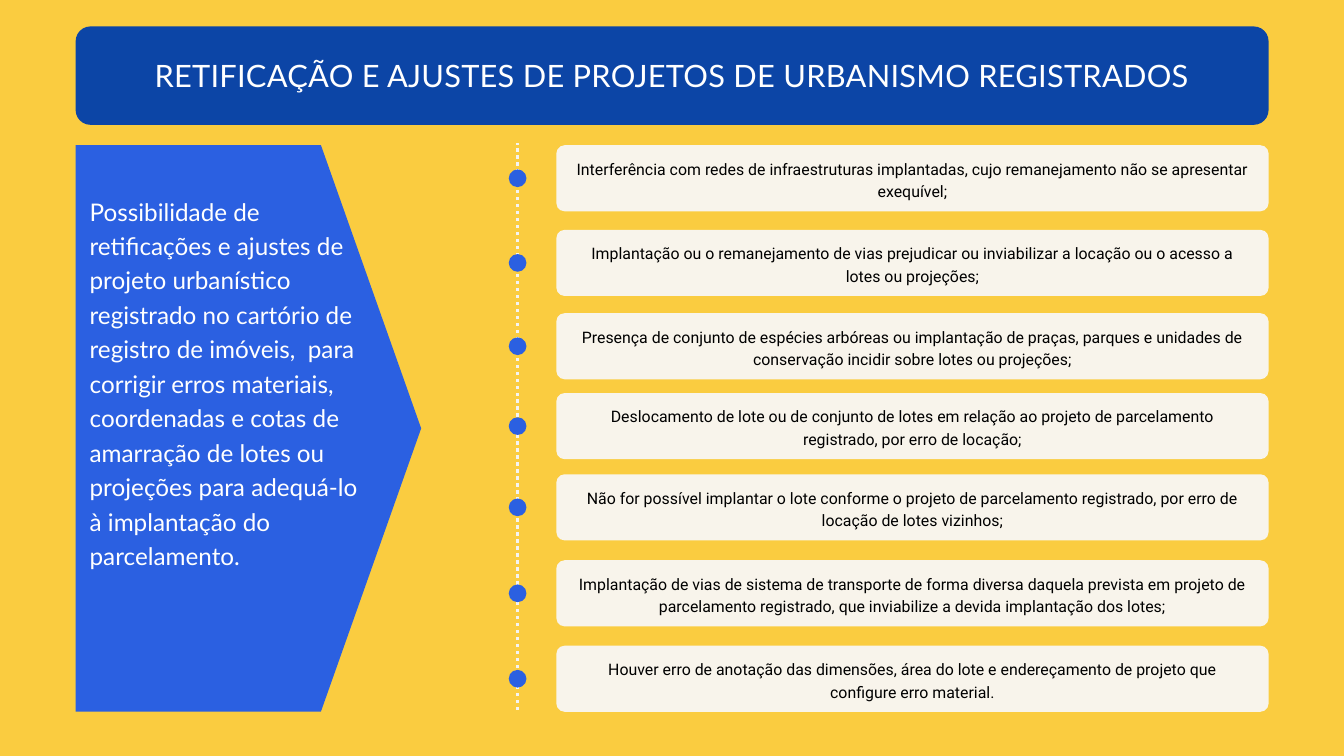
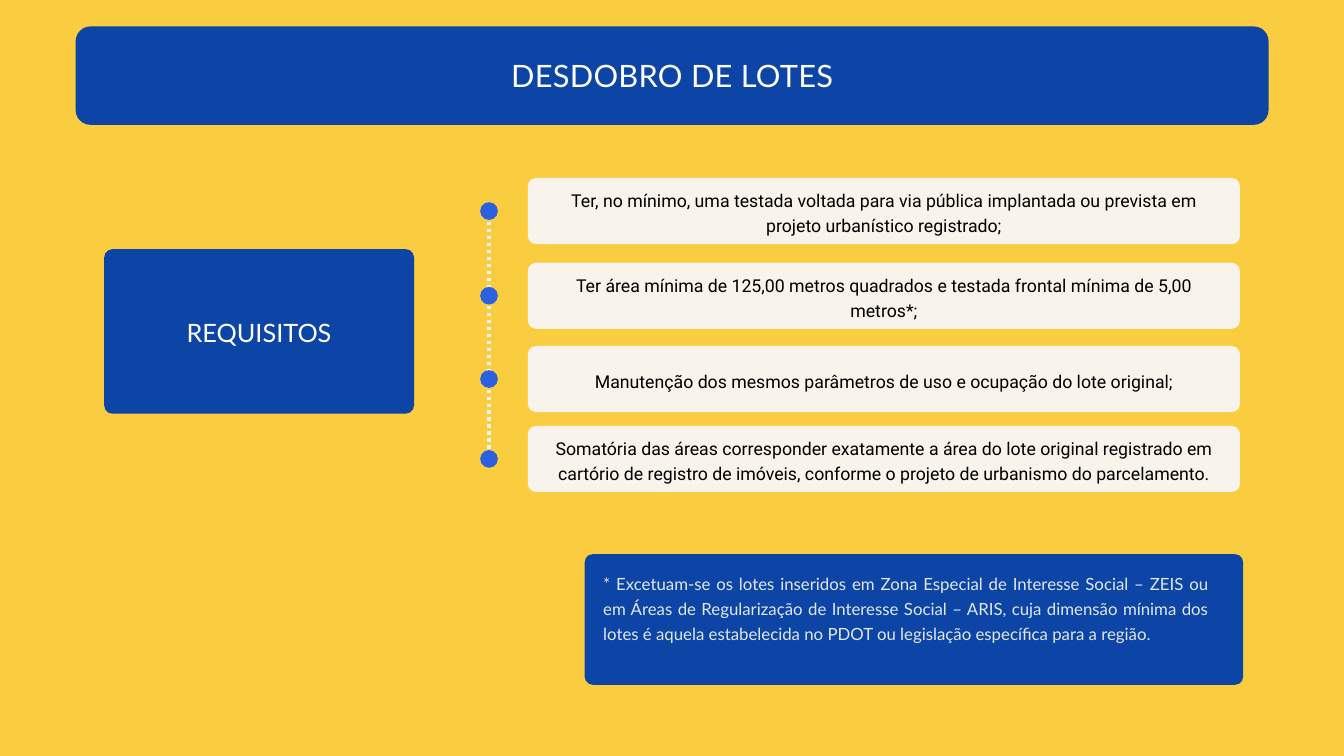
from pptx import Presentation
from pptx.dml.color import RGBColor
from pptx.enum.dml import MSO_LINE
from pptx.enum.shapes import MSO_CONNECTOR, MSO_SHAPE
from pptx.enum.text import MSO_ANCHOR, MSO_AUTO_SIZE, PP_ALIGN
from pptx.oxml.ns import qn
from pptx.util import Cm, Pt

# Content
ADJUSTMENTS_TITLE = "RETIFICAÇÃO E AJUSTES DE PROJETOS DE URBANISMO REGISTRADOS"
ADJUSTMENTS_INTRO = (
    "Possibilidade de retificações e ajustes de projeto urbanístico registrado no "
    "cartório de registro de imóveis,  para corrigir erros materiais, coordenadas e "
    "cotas de amarração de lotes ou projeções para adequá-lo à implantação do parcelamento."
)
ADJUSTMENT_CASES = [
    "Interferência com redes de infraestruturas implantadas, cujo remanejamento não se "
    "apresentar exequível;",
    "Implantação ou o remanejamento de vias prejudicar ou inviabilizar a locação ou o "
    "acesso a lotes ou projeções;",
    "Presença de conjunto de espécies arbóreas ou implantação de praças, parques e "
    "unidades de conservação incidir sobre lotes ou projeções;",
    "Deslocamento de lote ou de conjunto de lotes em relação ao projeto de parcelamento "
    "registrado, por erro de locação;",
    "Não for possível implantar o lote conforme o projeto de parcelamento registrado, "
    "por erro de locação de lotes vizinhos;",
    "Implantação de vias de sistema de transporte de forma diversa daquela prevista em "
    "projeto de parcelamento registrado, que inviabilize a devida implantação dos lotes;",
    "Houver erro de anotação das dimensões, área do lote e endereçamento de projeto que "
    "configure erro material.",
]
SPLIT_TITLE = "DESDOBRO DE LOTES"
SPLIT_LABEL = "REQUISITOS"
SPLIT_REQUIREMENTS = [
    "Ter, no mínimo, uma testada voltada para via pública implantada ou prevista em "
    "projeto urbanístico registrado;",
    "Ter área mínima de 125,00 metros quadrados e testada frontal mínima de 5,00 metros*;",
    "Manutenção dos mesmos parâmetros de uso e ocupação do lote original;",
    "Somatória das áreas corresponder exatamente a área do lote original registrado em "
    "cartório de registro de imóveis, conforme o projeto de urbanismo do parcelamento.",
]
SPLIT_NOTE = (
    "* Excetuam-se os lotes inseridos em Zona Especial de Interesse Social – ZEIS ou em "
    "Áreas de Regularização de Interesse Social – ARIS, cuja dimensão mínima dos lotes é "
    "aquela estabelecida no PDOT ou legislação específica para a região."
)

# Shared look, lengths in centimetres
YELLOW, NAVY, BLUE, CREAM = "FACC40", "0C45A6", "2B60E1", "F8F4EB"
WHITE, BLACK, DOT_GREY, NOTE_GREY = "FFFFFF", "000000", "F4F4F4", "E2E7EB"
BAND = (2.86, 1, 45.09, 3.72)
TITLE_BOX = (5.03, 2.03, 40.77, 1.52)
CARD_OFFSETS = [0, 3.2, 6.35, 9.37, 12.44, 15.69, 18.92]
CARD_W, CARD_H, CARD_INSET = 26.92, 2.5, 0.56
DOT_SIZE, DOT_GAP = 0.67, 1.8
CORNER, BAND_CORNER = 0.31, 0.56


def rgb(hex_colour):
    return RGBColor.from_string(hex_colour)


def add_block(slide, kind, box, colour):
    block = slide.shapes.add_shape(kind, *map(Cm, box))
    block.shadow.inherit = False
    block.fill.solid()
    block.fill.fore_color.rgb = rgb(colour)
    block.line.fill.background()
    return block


def add_rounded(slide, box, colour, corner=CORNER):
    block = add_block(slide, MSO_SHAPE.ROUNDED_RECTANGLE, box, colour)
    block.adjustments[0] = corner / min(box[2:])
    return block


def write(shape, text, font, size, leading, colour, align=PP_ALIGN.CENTER,
          anchor=MSO_ANCHOR.MIDDLE, insets=(0, 0, 0, 0)):
    frame = shape.text_frame
    frame.word_wrap = True
    frame.auto_size = MSO_AUTO_SIZE.NONE
    frame.vertical_anchor = anchor
    (frame.margin_left, frame.margin_top,
     frame.margin_right, frame.margin_bottom) = map(Cm, insets)
    frame.text = text
    paragraph = frame.paragraphs[0]
    paragraph.alignment = align
    paragraph.line_spacing = Pt(leading)
    paragraph.font.name = font
    paragraph.font.size = Pt(size)
    paragraph.font.color.rgb = rgb(colour)
    return paragraph


def add_titled_slide(prs, text):
    slide = prs.slides.add_slide(prs.slide_layouts[5])
    title = slide.shapes.title
    band = add_rounded(slide, BAND, NAVY, BAND_CORNER)
    title._element.addprevious(band._element)  # band goes behind the title
    title.left, title.top, title.width, title.height = map(Cm, TITLE_BOX)
    heading = write(title, text, "Lato", 33, 42.9, WHITE, anchor=MSO_ANCHOR.TOP)
    heading.runs[0]._r.get_or_add_rPr().set("spc", "30")
    return slide


def add_dotted_line(slide, x, top, bottom):
    line = slide.shapes.add_connector(
        MSO_CONNECTOR.STRAIGHT, Cm(x), Cm(bottom), Cm(x), Cm(top))
    line.line.color.rgb = rgb(DOT_GREY)
    line.line.width = Pt(3.75)
    line.line.dash_style = MSO_LINE.ROUND_DOT
    properties = line._element.spPr
    properties.append(properties.makeelement(qn("a:effectLst"), {}))


def add_timeline(slide, items, left, top, line_span, size, leading):
    """Cards in a column, each with a dot on the dotted line to its left."""
    dot_left = left - DOT_GAP
    add_dotted_line(slide, dot_left + DOT_SIZE / 2, *line_span)
    for item, offset in zip(items, CARD_OFFSETS):
        card_top = top + offset
        card = add_rounded(slide, (left, card_top, CARD_W, CARD_H), CREAM)
        write(card, item, "Roboto", size, leading, BLACK,
              insets=(CARD_INSET, 0, CARD_INSET, 0))
        dot_top = card_top + (CARD_H - DOT_SIZE) / 2
        add_block(slide, MSO_SHAPE.OVAL, (dot_left, dot_top, DOT_SIZE, DOT_SIZE), BLUE)


def build_adjustments(prs):
    slide = add_titled_slide(prs, ADJUSTMENTS_TITLE)
    intro = add_block(slide, MSO_SHAPE.PENTAGON, (2.86, 5.49, 13.06, 21.41), BLUE)
    intro.adjustments[0] = 0.29
    write(intro, ADJUSTMENTS_INTRO, "Lato", 26, 36.9, WHITE, PP_ALIGN.LEFT,
          MSO_ANCHOR.TOP, (0.53, 1.75, 0.38, 0))
    add_timeline(slide, ADJUSTMENT_CASES, 21.03, 5.49, (5.41, 26.85), 17, 24.1)


def build_split(prs):
    slide = add_titled_slide(prs, SPLIT_TITLE)
    label = add_rounded(slide, (3.94, 9.42, 11.71, 6.22), NAVY)
    write(label, SPLIT_LABEL, "Lato", 27.1, 35.2, WHITE)
    add_timeline(slide, SPLIT_REQUIREMENTS, 19.95, 6.73, (7.98, 16.97), 19, 27)
    note = add_rounded(slide, (22.1, 20.95, 24.89, 4.94), NAVY)
    write(note, SPLIT_NOTE, "Lato", 18, 27, NOTE_GREY, PP_ALIGN.JUSTIFY,
          MSO_ANCHOR.TOP, (0.61, 0.46, 1.22, 0))


def main():
    prs = Presentation()
    prs.slide_width, prs.slide_height = Cm(50.8), Cm(28.58)
    background = prs.slide_master.background.fill
    background.solid()
    background.fore_color.rgb = rgb(YELLOW)
    build_adjustments(prs)
    build_split(prs)
    prs.save("out.pptx")


if __name__ == "__main__":
    main()
